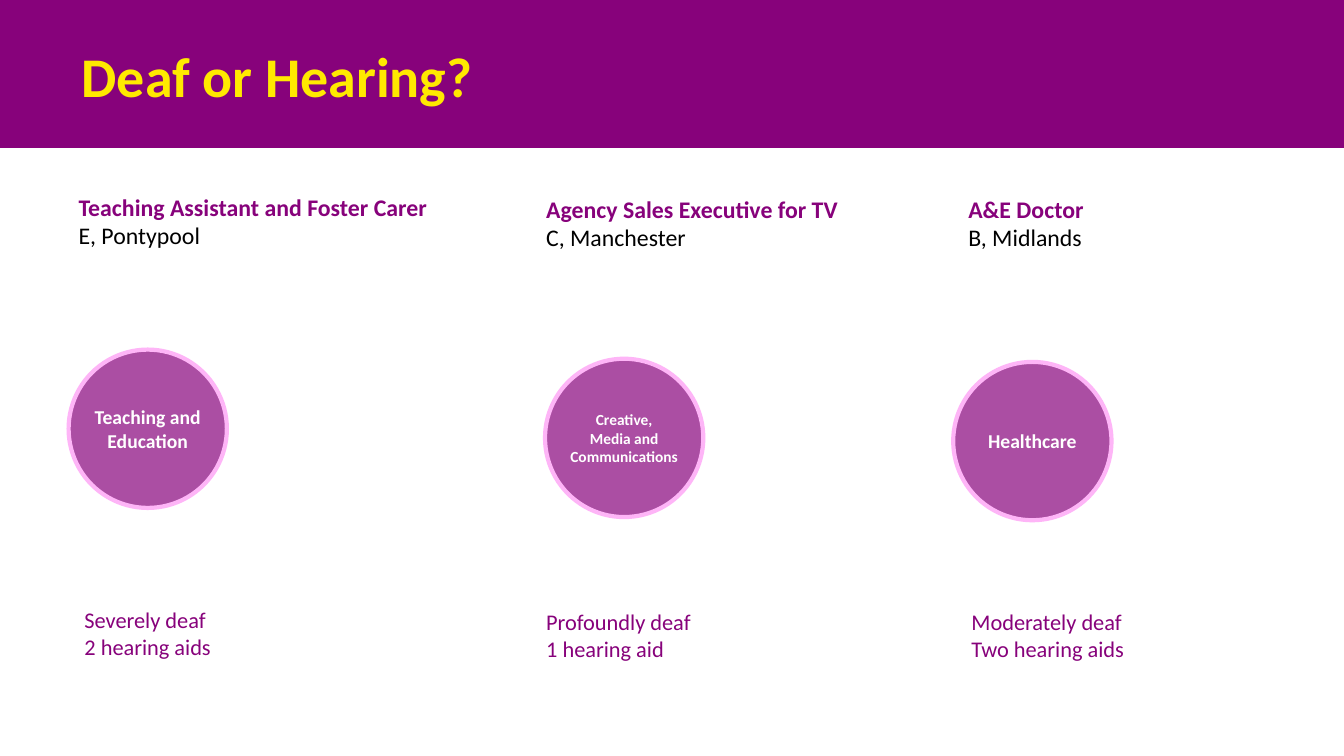
from dataclasses import dataclass

from pptx import Presentation
from pptx.dml.color import RGBColor
from pptx.enum.shapes import MSO_SHAPE
from pptx.enum.text import MSO_ANCHOR, PP_ALIGN
from pptx.util import Cm, Pt

RECTANGLE, OVAL = MSO_SHAPE.RECTANGLE, MSO_SHAPE.OVAL
TOP, MIDDLE = MSO_ANCHOR.TOP, MSO_ANCHOR.MIDDLE
LEFT, CENTER = PP_ALIGN.LEFT, PP_ALIGN.CENTER
TITLE_ONLY = 5
FONT = "Calibri"
COLORS = {
    "purple": "87027B",
    "yellow": "FFE900",
    "orchid": "AB4EA3",
    "pink": "FEB5F7",
    "white": "FFFFFF",
    "black": "000000",
}
SLIDE_WIDTH, SLIDE_HEIGHT = 33.88, 19.05
CIRCLE_SIZE = 3.99
CIRCLE_TOP, STATUS_TOP = 4.09, 10.42  # below the top of a profile
WIDE_INSETS, NARROW_INSETS = (0.33, 0.18), (0.25, 0.13)


@dataclass
class Profile:
    role: str
    person: str
    sector: str
    status: str
    box: tuple  # left, top, width, height of the column
    sector_size: int = 14
    sector_shift: tuple = (0, 0)
    status_shift: float = 0
    insets: tuple = WIDE_INSETS


PROFILES = [
    Profile("Teaching Assistant and Foster Carer", "E, Pontypool",
            "Teaching and Education", "Severely deaf\n2 hearing aids",
            (1.73, 4.72, 11.4, 12.2), status_shift=0.15, insets=NARROW_INSETS),
    Profile("Agency Sales Executive for TV", "C, Manchester",
            "Creative,\vMedia and\nCommunications", "Profoundly deaf\n1 hearing aid",
            (13.44, 4.72, 10.03, 12.43), sector_size=11, sector_shift=(0.3, 0.23)),
    Profile("A&E Doctor", "B, Midlands",
            "Healthcare", "Moderately deaf\nTwo hearing aids",
            (24.08, 4.72, 6.93, 12.43), sector_shift=(-0.05, 0.31), status_shift=0.08),
]


def rgb(name):
    return RGBColor.from_string(COLORS[name])


def style(paragraph, size, color, bold=False, align=LEFT):
    paragraph.alignment = align
    for run in paragraph.runs:
        font = run.font
        font.name, font.size, font.bold = FONT, Pt(size), bold
        font.color.rgb = rgb(color)


def set_frame(frame, insets, anchor=TOP):
    frame.word_wrap = True
    frame.vertical_anchor = anchor
    frame.margin_left = frame.margin_right = Cm(insets[0])
    frame.margin_top = frame.margin_bottom = Cm(insets[1])


def add_filled(slide, kind, box, color):
    shape = slide.shapes.add_shape(kind, *map(Cm, box))
    shape.shadow.inherit = False
    shape.fill.solid()
    shape.fill.fore_color.rgb = rgb(color)
    return shape


def add_text(slide, box, insets, text):
    frame = slide.shapes.add_textbox(*map(Cm, box)).text_frame
    set_frame(frame, insets)
    frame.text = text
    return frame.paragraphs


def add_header(slide, box, text):
    left, top, width, height = box
    band = add_filled(slide, RECTANGLE, box, "purple")
    band.line.fill.background()

    # The title lies in front of its band
    title = slide.shapes.title
    band._element.addnext(title._element)
    title.left, title.top = Cm(left + 1.73), Cm(top + 0.89)
    title.width, title.height = Cm(width - 10.94), Cm(height - 1.72)
    set_frame(title.text_frame, WIDE_INSETS, MIDDLE)
    title.text_frame.text = text
    style(title.text_frame.paragraphs[0], 40, "yellow", bold=True)


def add_profile(slide, profile):
    left, top, width, height = profile.box

    # Role and person
    role, person = add_text(slide, (left, top, width, 2.01), profile.insets,
                            f"{profile.role}\n{profile.person}")
    style(role, 17, "purple", bold=True)
    style(person, 17, "black")

    # Sector circle
    dx, dy = profile.sector_shift
    circle = add_filled(slide, OVAL, (left + dx, top + CIRCLE_TOP + dy,
                                      CIRCLE_SIZE, CIRCLE_SIZE), "orchid")
    circle.line.color.rgb = rgb("pink")
    circle.line.width = Pt(3)
    set_frame(circle.text_frame, (0, 0), MIDDLE)
    circle.text_frame.text = profile.sector
    for paragraph in circle.text_frame.paragraphs:
        style(paragraph, profile.sector_size, "white", bold=True, align=CENTER)

    # Hearing status
    status_box = (left + profile.status_shift, top + STATUS_TOP, 7, height - STATUS_TOP)
    for paragraph in add_text(slide, status_box, profile.insets, profile.status):
        style(paragraph, 16, "purple")


def main():
    deck = Presentation()
    deck.slide_width, deck.slide_height = Cm(SLIDE_WIDTH), Cm(SLIDE_HEIGHT)
    slide = deck.slides.add_slide(deck.slide_layouts[TITLE_ONLY])
    add_header(slide, (0, 0, SLIDE_WIDTH, 3.73), "Deaf or Hearing?")
    for profile in PROFILES:
        add_profile(slide, profile)
    deck.save("out.pptx")


if __name__ == "__main__":
    main()
